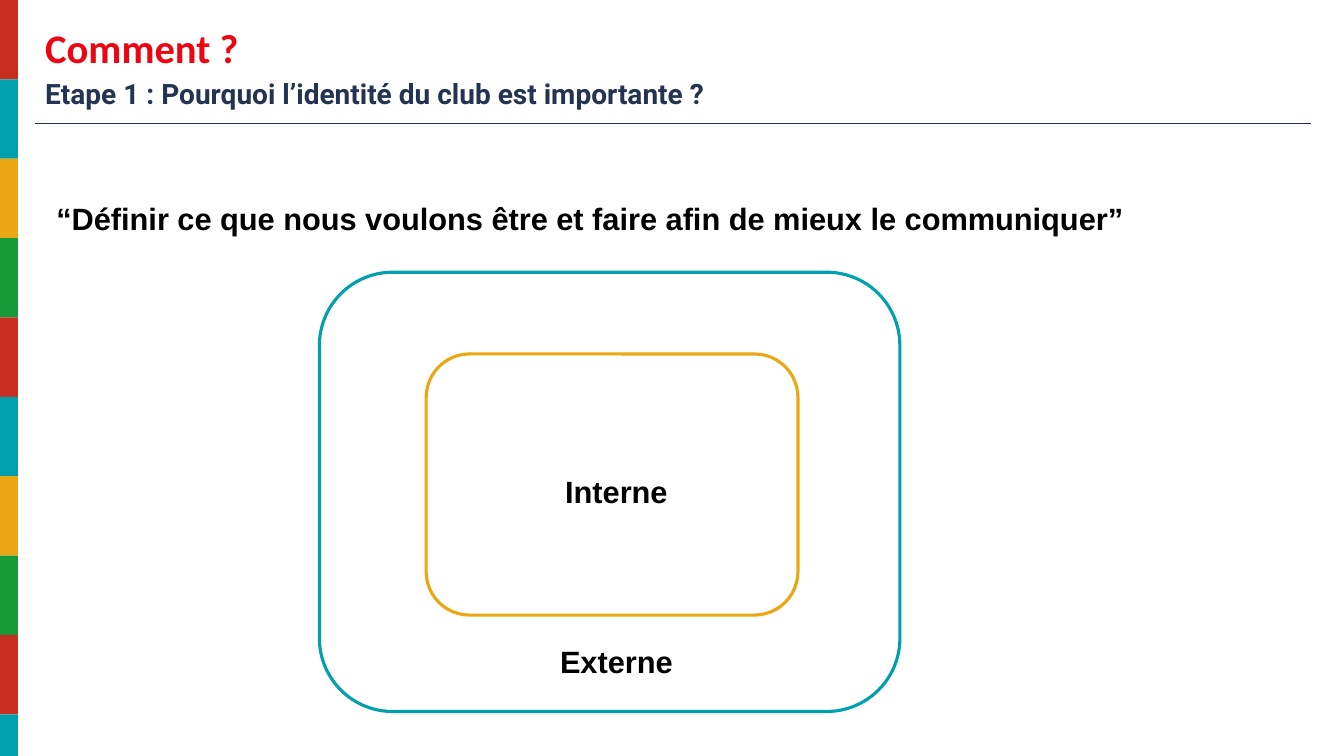
from itertools import cycle, islice

from lxml import etree
from pptx import Presentation
from pptx.dml.color import RGBColor
from pptx.enum import shapes, text
from pptx.oxml.ns import qn
from pptx.util import Cm, Pt

WIDTH, HEIGHT = 33.87, 19.05
COLORS = {
    "red": "C92F20", "teal": "00A1AC", "gold": "EBA613", "green": "179A38",
    "title": "EC0614", "subtitle": "233352", "rule": "21304E", "black": "000000",
}
STRIPE_COLORS = ["red", "teal", "gold", "green"]
STRIPE_LEFT, STRIPE_WIDTH, STRIPE_HEIGHT, STRIPE_COUNT = -0.05, 0.5, 2, 10
RULE = (0.89, 33.05, 3.12)  # start, end, height on the page

# left, top, width, height in centimetres
FRAMES = [
    ("teal", (8.05, 6.86, 14.63, 11.07)),
    ("gold", (10.74, 8.92, 9.37, 6.58)),
]
HEADINGS = [
    ("Comment ?", (0.89, 0.36, 32.16, 1.65),
     {"size": 29, "font": "Calibri", "color": "title"}),
    ("Etape 1 : Pourquoi l’identité du club est importante ?", (0.89, 1.78, 30.02, 1.12),
     {"size": 20, "font": "Roboto", "color": "subtitle"}),
]
QUOTE = "“Définir ce que nous voulons être et faire afin de mieux le communiquer”"
QUOTE_AREA = (1.17, 4.78, 31.57, 1.45)
LABELS = [("Interne", 11.66), ("Externe", 15.93)]
LABEL_LEFT, LABEL_WIDTH, LABEL_HEIGHT = 13.34, 4.39, 1.45


def rgb(name):
    return RGBColor.from_string(COLORS[name])


def add_text(page, words, area, size=22, font="Arial", color="black",
             align=text.PP_ALIGN.LEFT, padding=0.25):
    box = page.shapes.add_textbox(*map(Cm, area))
    frame = box.text_frame
    frame.word_wrap = True
    frame.vertical_anchor = text.MSO_ANCHOR.MIDDLE
    frame.margin_left = frame.margin_right = Cm(0.25)
    frame.margin_top = frame.margin_bottom = Cm(padding)
    para = frame.paragraphs[0]
    para.alignment = align
    span = para.add_run()
    span.text = words
    span.font.size, span.font.name, span.font.bold = Pt(size), font, True
    span.font.color.rgb = rgb(color)


def add_box(page, kind, area, fill=None, line=None):
    box = page.shapes.add_shape(kind, *map(Cm, area))
    box.shadow.inherit = False
    if fill:
        box.fill.solid()
        box.fill.fore_color.rgb = rgb(fill)
    else:
        box.fill.background()
    if line:
        box.line.color.rgb = rgb(line)
        box.line.width = Pt(2.25)
    else:
        box.line.fill.background()


def add_stripes(page):
    for index, color in enumerate(islice(cycle(STRIPE_COLORS), STRIPE_COUNT)):
        top = index * STRIPE_HEIGHT
        height = min(STRIPE_HEIGHT, HEIGHT - top)
        add_box(page, shapes.MSO_SHAPE.RECTANGLE,
                (STRIPE_LEFT, top, STRIPE_WIDTH, height), fill=color)


def add_rule(page):
    start, end, top = map(Cm, RULE)
    rule = page.shapes.add_connector(shapes.MSO_CONNECTOR.STRAIGHT, start, top, end, top)
    rule.line.color.rgb = rgb("rule")
    rule.line.width = Pt(0.75)
    etree.SubElement(rule._element.spPr, qn("a:effectLst"))


def main():
    deck = Presentation()
    deck.slide_width, deck.slide_height = Cm(WIDTH), Cm(HEIGHT)
    page = deck.slides.add_slide(deck.slide_layouts[6])
    add_stripes(page)
    for words, area, style in HEADINGS:
        add_text(page, words, area, padding=0.13, **style)
    add_rule(page)
    add_text(page, QUOTE, QUOTE_AREA)
    for color, area in FRAMES:
        add_box(page, shapes.MSO_SHAPE.ROUNDED_RECTANGLE, area, line=color)
    for words, top in LABELS:
        add_text(page, words, (LABEL_LEFT, top, LABEL_WIDTH, LABEL_HEIGHT),
                 align=text.PP_ALIGN.CENTER)
    deck.save("out.pptx")


if __name__ == "__main__":
    main()
